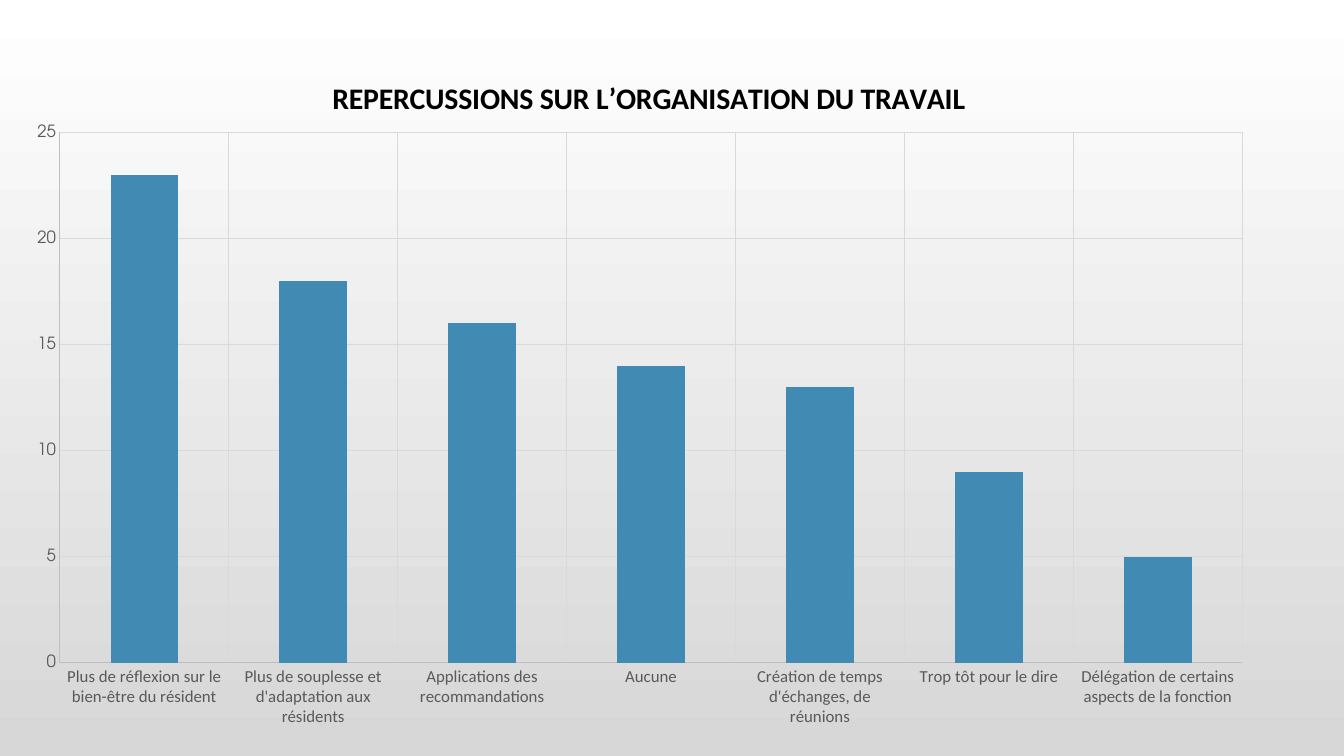
from lxml import etree
from pptx import Presentation
from pptx import util as u
from pptx.chart.data import CategoryChartData
from pptx.dml.color import RGBColor
from pptx.enum import chart as ch
from pptx.oxml.ns import qn

HUES = {"top": "FFFFFF", "base": "D7D7D7", "bar": "418AB3", "ink": "000000",
        "label": "595959", "axis": "BFBFBF", "grid": "D9D9D9"}
WIDE, HIGH = u.Inches(13.33), u.Inches(7.5)
SANS, GEO = "Calibri", "TeX Gyre Adventor"
TITLE = "REPERCUSSIONS SUR L’ORGANISATION DU TRAVAIL"
COUNTS = {
    "Plus de réflexion sur le bien-être du résident": 23,
    "Plus de souplesse et d'adaptation aux résidents": 18,
    "Applications des recommandations": 16,
    "Aucune": 14,
    "Création de temps d'échanges, de réunions": 13,
    "Trop tôt pour le dire": 9,
    "Délégation de certains aspects de la fonction": 5,
}


def hue(name):
    """Return the named colour."""
    return RGBColor.from_string(HUES[name])


def style(font, face, size, name, bold=False):
    """Format a font."""
    font.name, font.size, font.bold = face, u.Pt(size), bold
    font.color.rgb = hue(name)


def rule(line, name):
    """Draw a thin line in the named colour."""
    line.color.rgb = hue(name)
    line.width = u.Pt(0.75)


def shade(slide):
    """Fill the background from top to base."""
    fill = slide.background.fill
    fill.gradient()
    fill.gradient_angle = 270
    for stop, name in zip(fill.gradient_stops, ("top", "base")):
        stop.color.rgb = hue(name)


def place(node, **parts):
    """Give a chart part a manual layout in shares of the chart."""
    for old in node.findall(qn("c:layout")):
        node.remove(old)
    lay = etree.Element(qn("c:layout"))
    man = etree.SubElement(lay, qn("c:manualLayout"))
    if "w" in parts:
        etree.SubElement(man, qn("c:layoutTarget"), val="inner")
    for key in "xy":
        etree.SubElement(man, qn(f"c:{key}Mode"), val="edge")
    for key, share in parts.items():
        etree.SubElement(man, qn(f"c:{key}"), val=str(share))
    text = node.find(qn("c:tx"))
    node.insert(0 if text is None else 1, lay)


def dress(axis, face):
    """Format an axis with its labels and grid."""
    axis.major_tick_mark = axis.minor_tick_mark = ch.XL_TICK_MARK.NONE
    axis.has_major_gridlines = True
    rule(axis.major_gridlines.format.line, "grid")
    rule(axis.format.line, "axis")
    style(axis.tick_labels.font, face, 12, "label")


def head(chart):
    """Write the chart title."""
    chart.has_title = True
    title = chart.chart_title
    title.include_in_layout = False
    run = title.text_frame.paragraphs[0].add_run()
    run.text = TITLE
    style(run.font, SANS, 21.3, "ink", True)
    place(title._element, x=0.25, y=0.04)


def bars(slide):
    """Add the column chart."""
    data = CategoryChartData()
    data.categories = list(COUNTS)
    data.add_series("Series 1", list(COUNTS.values()))
    chart = slide.shapes.add_chart(
        ch.XL_CHART_TYPE.COLUMN_CLUSTERED, int(WIDE * 0.01), int(HIGH * 0.059),
        int(WIDE * 0.933), int(HIGH * 0.921), data).chart
    style(chart.font, GEO, 10, "ink")
    chart.has_legend = False
    head(chart)
    dress(chart.category_axis, SANS)
    dress(chart.value_axis, GEO)
    scale = chart.value_axis
    scale.minimum_scale, scale.maximum_scale, scale.major_unit = 0, 25, 5
    plot = chart.plots[0]
    plot.gap_width, plot.vary_by_categories = 150, False
    fill = plot.series[0].format.fill
    fill.solid()
    fill.fore_color.rgb = hue("bar")
    area = chart._chartSpace.find(".//" + qn("c:plotArea"))
    place(area, x=0.037, y=0.126, w=0.943, h=0.762)


def main():
    """Build and save the slide."""
    deck = Presentation()
    deck.slide_width, deck.slide_height = WIDE, HIGH
    slide = deck.slides.add_slide(deck.slide_layouts[6])
    shade(slide)
    bars(slide)
    deck.save("out.pptx")


if __name__ == "__main__":
    main()
